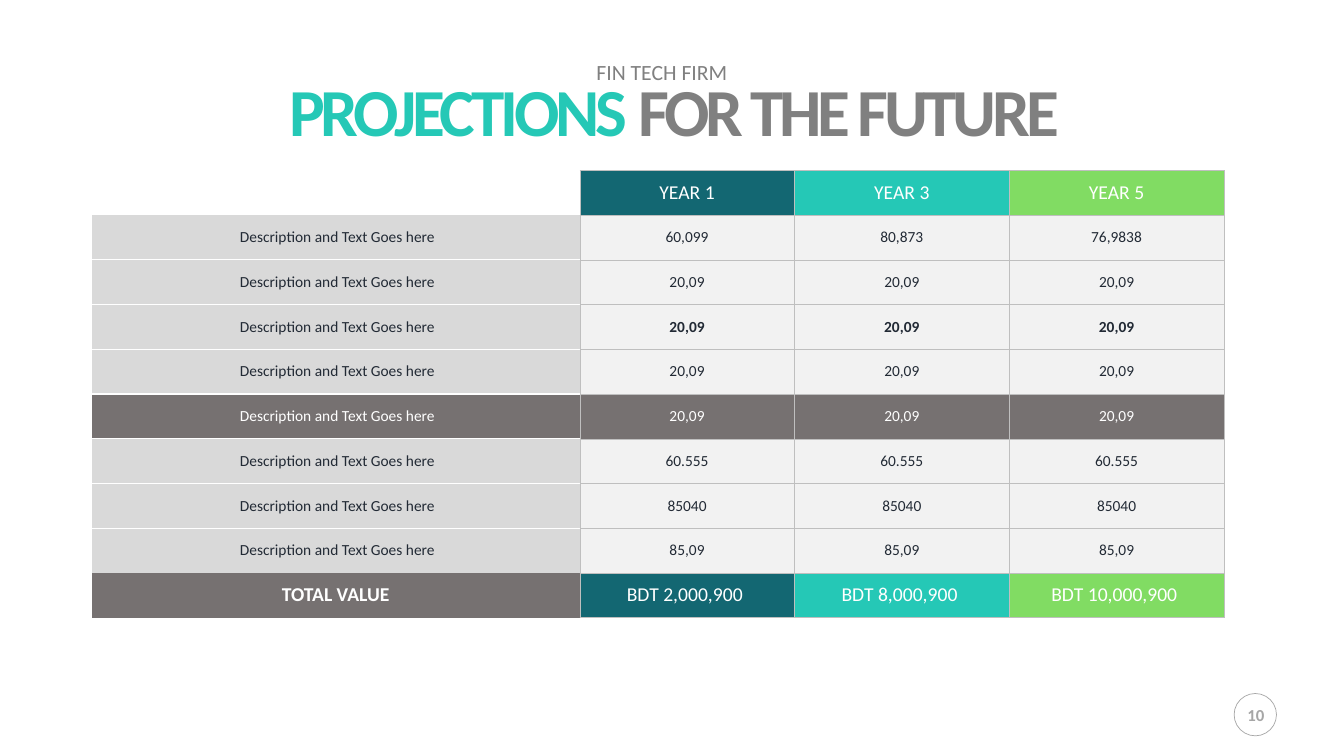
from dataclasses import dataclass

from lxml import etree
from pptx import Presentation
from pptx.dml.color import RGBColor
from pptx.enum.shapes import MSO_SHAPE
from pptx.enum.text import MSO_ANCHOR, MSO_AUTO_SIZE, PP_ALIGN
from pptx.oxml.ns import qn
from pptx.util import Inches, Pt


@dataclass(frozen=True)
class Theme:
    font: str = "Calibri"
    petrol: str = "136772"
    teal: str = "25C8B6"
    green: str = "81DC63"
    white: str = "FFFFFF"
    ink: str = "222A35"
    heading_gray: str = "808080"
    dark_gray: str = "767171"
    label_gray: str = "D9D9D9"
    value_gray: str = "F2F2F2"
    grid_gray: str = "BFBFBF"
    page_gray: str = "A6A6A6"
    title_size: float = 48
    subtitle_size: float = 15.5
    header_size: float = 14
    body_size: float = 11
    page_size: float = 12


theme = Theme()


def style_text(paragraph, size, color, bold=False):
    paragraph.alignment = PP_ALIGN.CENTER
    font = paragraph.font
    font.name, font.size, font.bold = theme.font, Pt(size), bold
    font.color.rgb = RGBColor.from_string(color)


def set_borders(cell, borders):
    """Draw the sides given as {side: (color, points)} and hide the others."""
    properties = cell._tc.get_or_add_tcPr()
    for position, side in enumerate("LRTB"):
        line = etree.Element(qn(f"a:ln{side}"))
        if side in borders:
            color, width = borders[side]
            line.set("w", str(Pt(width)))
            fill = etree.SubElement(line, qn("a:solidFill"))
            etree.SubElement(fill, qn("a:srgbClr"), val=color)
        else:
            etree.SubElement(line, qn("a:noFill"))
        properties.insert(position, line)


prs = Presentation()
prs.slide_width, prs.slide_height = Inches(13.33), Inches(7.5)
slide = prs.slides.add_slide(prs.slide_layouts[5])

# Heading
title = slide.shapes.title
title.left, title.top = Inches(2.05), Inches(0.67)
title.width, title.height = Inches(9.27), Inches(0.86)
title_frame = title.text_frame
title_frame.auto_size = MSO_AUTO_SIZE.NONE
title_frame.vertical_anchor = MSO_ANCHOR.TOP
title_frame.margin_left = title_frame.margin_right = Inches(0.05)
title_frame.margin_top = title_frame.margin_bottom = Inches(0.02)
heading = title_frame.paragraphs[0]
style_text(heading, theme.title_size, theme.heading_gray, bold=True)
for words, color in (("PROJECTIONS ", theme.teal), ("FOR THE FUTURE", theme.heading_gray)):
    run = heading.add_run()
    run.text = words
    run.font.color.rgb = RGBColor.from_string(color)
    run._r.get_or_add_rPr().set("spc", "-300")

subtitle = slide.shapes.add_textbox(Inches(3.38), Inches(0.47), Inches(6.37), Inches(0.46))
subtitle_frame = subtitle.text_frame
subtitle_frame.word_wrap = True
subtitle_frame.margin_left = subtitle_frame.margin_right = Inches(0.12)
subtitle_frame.margin_top = subtitle_frame.margin_bottom = Inches(0.06)
subtitle_frame.text = "FIN TECH FIRM"
subtitle_frame.paragraphs[0].line_spacing = 1.2
style_text(subtitle_frame.paragraphs[0], theme.subtitle_size, theme.heading_gray)

# Projection table
label = " Description and Text Goes here"
rows = [
    ("", "YEAR 1", "YEAR 3", "YEAR 5"),
    (label, "60,099", "80,873", "76,9838"),
    (label, *["20,09"] * 3),
    (label, *["20,09"] * 3),
    (label, *["20,09"] * 3),
    (label, *["20,09"] * 3),
    (label, *["60.555"] * 3),
    (label, *["85040"] * 3),
    (label, *["85,09"] * 3),
    ("TOTAL VALUE", "BDT 2,000,900 ", "BDT 8,000,900 ", "BDT 10,000,900 "),
]
year_colors = (theme.petrol, theme.teal, theme.green)
bold_row, dark_row, total_row = 3, 5, len(rows) - 1
grid_line, label_line = (theme.grid_gray, 0.25), (theme.white, 1)

table = slide.shapes.add_table(
    len(rows), 4, Inches(0.91), Inches(1.69), Inches(11.21), Inches(4.44)
).table
table.first_row = table.horz_banding = False
for column, width in zip(table.columns, (4.84, 2.13, 2.13, 2.13)):
    column.width = Inches(width)

for r, values in enumerate(rows):
    is_band = r in (0, total_row)
    for c, value in enumerate(values):
        cell = table.cell(r, c)
        cell.vertical_anchor = MSO_ANCHOR.MIDDLE
        cell.margin_left = cell.margin_right = Inches(0.12)
        cell.margin_top = cell.margin_bottom = Inches(0.06)

        if c and is_band:
            fill = year_colors[c - 1]
        elif r in (dark_row, total_row):
            fill = theme.dark_gray
        else:
            fill = theme.value_gray if c else theme.label_gray
        if value:
            cell.text = value
            cell.fill.solid()
            cell.fill.fore_color.rgb = RGBColor.from_string(fill)
        else:
            cell.fill.background()

        style_text(
            cell.text_frame.paragraphs[0],
            theme.header_size if is_band else theme.body_size,
            theme.white if is_band or r == dark_row else theme.ink,
            bold=(c > 0 and r == bold_row) or (c == 0 and r == total_row),
        )

        if c:
            borders = dict.fromkeys("LRTB", grid_line)
        else:
            borders = {"R": grid_line}
            if not is_band:
                borders["L"] = label_line
                if r > 1:
                    borders["T"] = label_line
                if r < total_row - 1:
                    borders["B"] = label_line
        set_borders(cell, borders)

# Page number
page_ring = slide.shapes.add_shape(
    MSO_SHAPE.OVAL, Inches(12.24), Inches(6.88), Inches(0.42), Inches(0.42)
)
page_ring.shadow.inherit = False
page_ring.fill.background()
page_ring.line.color.rgb = RGBColor.from_string(theme.page_gray)
page_ring.line.width = Pt(0.5)

page_number = slide.shapes.add_textbox(Inches(12.25), Inches(6.94), Inches(0.41), Inches(0.3))
page_number.text_frame.word_wrap = False
page_number.text_frame.text = "10"
style_text(page_number.text_frame.paragraphs[0], theme.page_size, theme.page_gray, bold=True)

prs.save("out.pptx")
